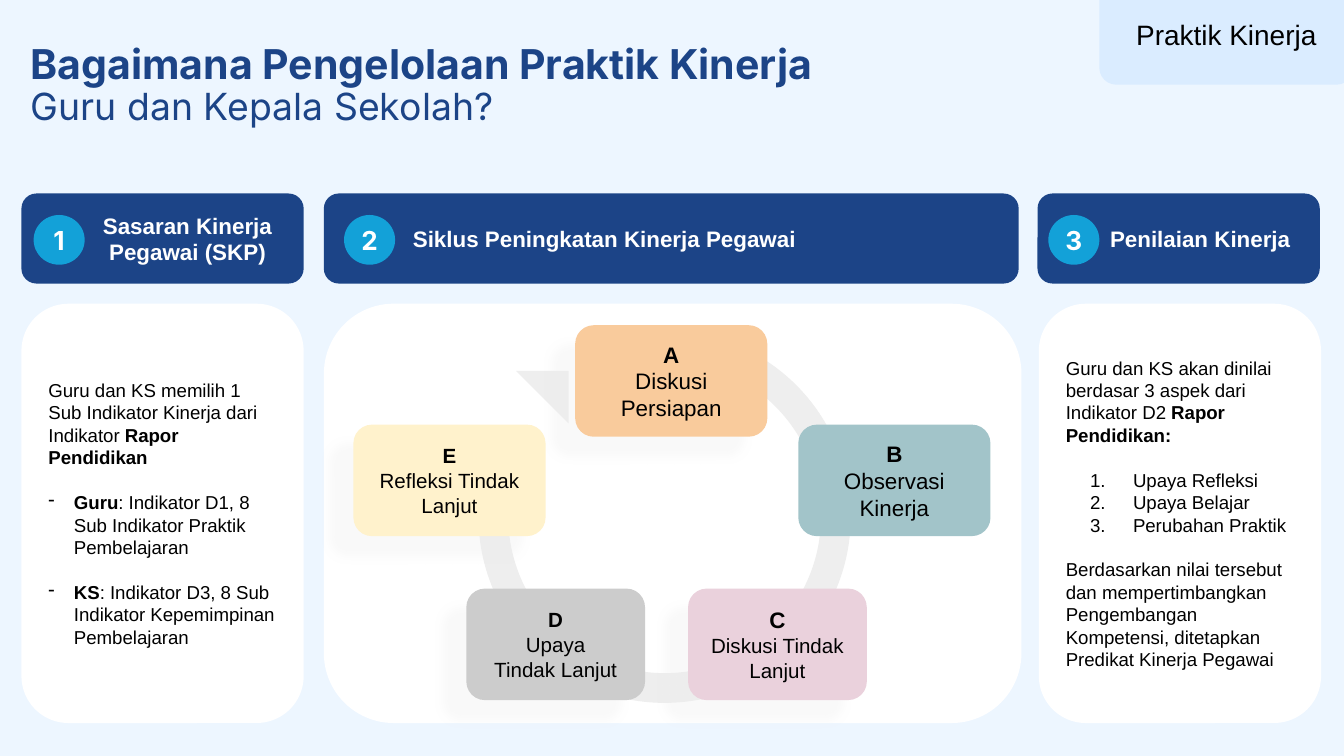
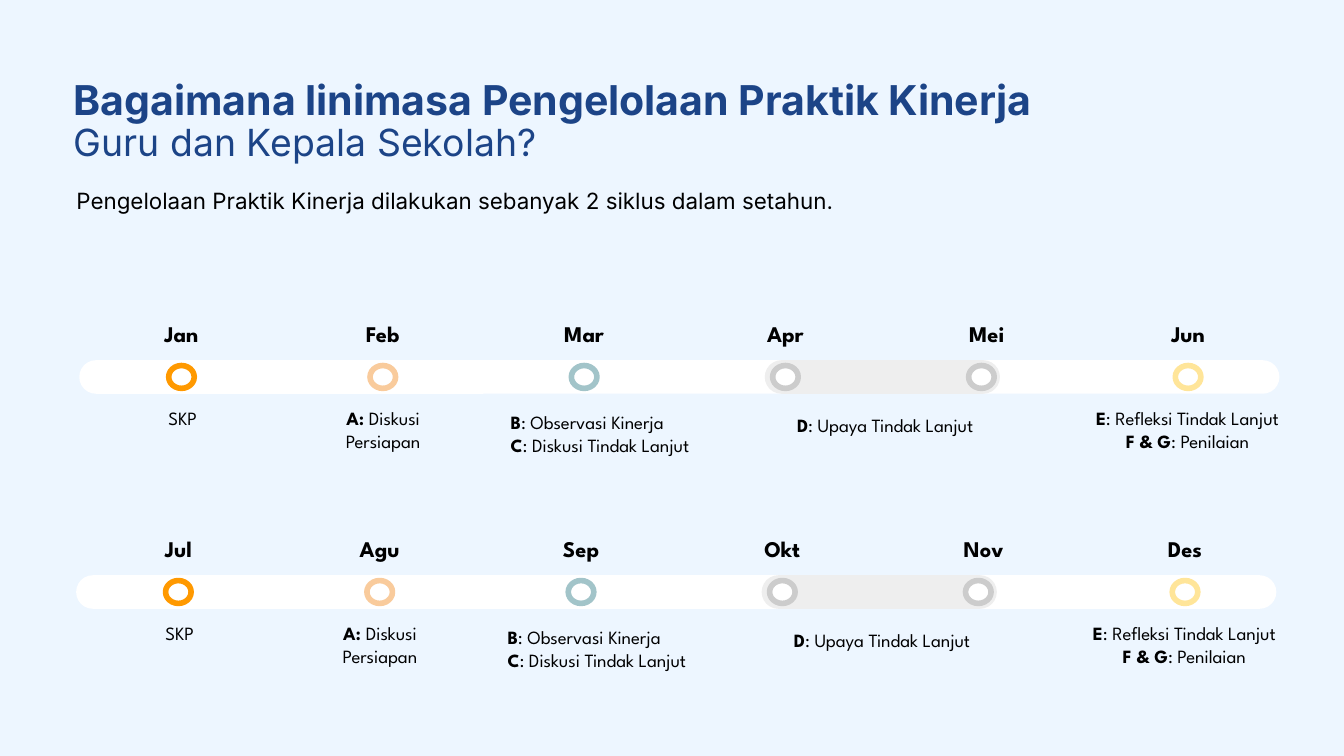
from dataclasses import dataclass

from lxml import etree
from pptx import Presentation
from pptx import util as u
from pptx.dml.color import RGBColor
from pptx.enum import shapes, text
from pptx.oxml.ns import qn


@dataclass(frozen=True)
class Theme:
    background: str = "EDF6FF"
    navy: str = "1C4487"
    tab: str = "DAECFF"
    badge: str = "13A1D8"
    white: str = "FFFFFF"
    black: str = "000000"
    pale: str = "EEEEEE"
    orange: str = "FF9900"
    peach: str = "F9CB9C"
    teal: str = "A2C4C9"
    pink: str = "EAD1DC"
    cream: str = "FFF2CC"
    yellow: str = "FFE599"
    grey: str = "CCCCCC"
    title: int = 22
    subtitle: int = 20
    tab_size: int = 15
    badge_size: int = 14
    heading: int = 12
    label: int = 11
    body: int = 10
    sans: str = "Arial"
    display: str = "Inter"
    timeline: str = "League Spartan"


@dataclass
class Line:
    text: str
    size: int = 0
    bullet: str = ""
    before: int = 0
    spacing: float = 0


THEME = Theme()
COLUMNS, ROWS = 100, 56.25
SLIDE_WIDTH, SLIDE_HEIGHT = u.Inches(10), u.Inches(5.625)
SHAPE = shapes.MSO_SHAPE
LEFT, CENTER = text.PP_ALIGN.LEFT, text.PP_ALIGN.CENTER
TOP, MIDDLE = text.MSO_ANCHOR.TOP, text.MSO_ANCHOR.MIDDLE


def across(columns):
    return int(SLIDE_WIDTH * columns / COLUMNS)


def down(rows):
    return int(SLIDE_HEIGHT * rows / ROWS)


def place(left, top, width, height):
    return across(left), down(top), across(width), down(height)


def color(value):
    return RGBColor.from_string(value)


def add_bullet(paragraph, bullet):
    numbered = bullet == "1."
    margin, hang = (5, 3.2) if numbered else (1.9, 1.9)
    properties = paragraph._p.get_or_add_pPr()
    properties.set("marL", str(across(margin)))
    properties.set("indent", str(-across(hang)))
    if numbered:
        etree.SubElement(properties, qn("a:buAutoNum"), type="arabicPeriod")
    else:
        etree.SubElement(properties, qn("a:buChar"), char=bullet)


def write(shape, lines, size, font=THEME.sans, ink=THEME.black, align=LEFT,
          anchor=MIDDLE, insets=(1, 1, 1, 1), wrap=True):
    frame = shape.text_frame
    frame.word_wrap = wrap
    frame.vertical_anchor = anchor
    frame.margin_left, frame.margin_right = across(insets[0]), across(insets[2])
    frame.margin_top, frame.margin_bottom = down(insets[1]), down(insets[3])
    for index, line in enumerate(lines):
        line = line if isinstance(line, Line) else Line(line)
        paragraph = frame.paragraphs[0] if index == 0 else frame.add_paragraph()
        paragraph.alignment = align
        if line.bullet:
            add_bullet(paragraph, line.bullet)
        if line.before:
            paragraph.space_before = u.Pt(line.before)
        if line.spacing:
            paragraph.line_spacing = line.spacing
        paragraph.font.name = font
        paragraph.font.size = u.Pt(line.size or size)
        paragraph.font.color.rgb = color(ink)
        parts = [(part, number % 2 == 1)
                 for number, part in enumerate(line.text.split("**")) if part]
        for part, bold in parts:
            run = paragraph.add_run()
            run.text = part
            if len(parts) > 1:
                run.font.bold = bold
            else:
                paragraph.font.bold = bold


def add_block(container, kind, box, fill, outline=None):
    shape = container.add_shape(kind, *place(*box))
    shape.shadow.inherit = False
    shape.fill.solid()
    shape.fill.fore_color.rgb = color(fill)
    if outline:
        shape.line.color.rgb = color(outline)
        shape.line.width = u.Pt(3)
    else:
        shape.line.fill.background()
    return shape


def add_label(container, box, lines, size, **style):
    write(container.add_textbox(*place(*box)), lines, size, **style)


def add_shadow(shape):
    effects = shape._element.spPr.find(qn("a:effectLst"))
    shadow = etree.SubElement(effects, qn("a:outerShdw"), blurRad=str(u.Pt(4.5)),
                              dist=str(u.Pt(16.5)), dir=str(140 * 60000),
                              algn="bl", rotWithShape="0")
    tint = etree.SubElement(shadow, qn("a:srgbClr"), val=THEME.pale)
    etree.SubElement(tint, qn("a:alpha"), val="30000")


def add_slide(presentation):
    slide = presentation.slides.add_slide(presentation.slide_layouts[6])
    slide.background.fill.solid()
    slide.background.fill.fore_color.rgb = color(THEME.background)
    return slide


def add_title(slide, box, title):
    lines = [Line(f"**{title}**", spacing=0.9),
             Line("Guru dan Kepala Sekolah?", THEME.subtitle, spacing=0.9)]
    add_label(slide.shapes, box, lines, THEME.title, font=THEME.display,
              ink=THEME.navy, insets=(0.7, 0.4, 0.7, 0.4))


def add_heading(slide, number, left, width, badge_left, inset, align, lines):
    band = add_block(slide.shapes, SHAPE.ROUNDED_RECTANGLE,
                     (left, 14.4, width, 6.7), THEME.navy)
    write(band, [f"**{line}**" for line in lines], THEME.heading,
          ink=THEME.white, align=align, insets=(inset, 1, 1, 1))
    badge = add_block(slide.shapes, SHAPE.OVAL, (badge_left, 16, 3.8, 3.7), THEME.badge)
    write(badge, [f"**{number}**"], THEME.badge_size, font=THEME.display,
          ink=THEME.white, align=CENTER, wrap=False)


def add_card(slide, left, width, lines=()):
    card = add_block(slide.shapes, SHAPE.ROUNDED_RECTANGLE,
                     (left, 22.6, width, 31.2), THEME.white)
    write(card, lines, THEME.body)


def add_cycle_arrow(slide):
    group = slide.shapes.add_group_shape().shapes
    ring = add_block(group, SHAPE.BLOCK_ARC, (35.6, 24.6, 27.7, 27.7), THEME.pale)
    for index, value in enumerate((74.38 * 0.6, 27 * 0.6, 0.08)):
        ring.adjustments[index] = value
    head = add_block(group, SHAPE.RIGHT_TRIANGLE, (38.4, 27.6, 3.9, 3.9), THEME.pale)
    for shape in (ring, head):
        shape.rotation = 180


def add_step(slide, left, top, width, fill, shadowed, size, lines):
    step = add_block(slide.shapes, SHAPE.ROUNDED_RECTANGLE,
                     (left, top, width, 8.3), fill)
    if shadowed:
        add_shadow(step)
    write(step, lines, size, align=CENTER)


def build_practice(presentation):
    slide = add_slide(presentation)
    headings = [
        (1, 1.6, 21, 2.5, 4.7, CENTER, ["Sasaran Kinerja", "Pegawai (SKP)"]),
        (2, 24.1, 51.7, 25.6, 6.3, LEFT, ["Siklus Peningkatan Kinerja Pegawai"]),
        (3, 77.2, 21, 78, 4.2, CENTER, ["Penilaian Kinerja"]),
    ]
    for heading in headings:
        add_heading(slide, *heading)
    add_card(slide, 1.6, 21, [
        "Guru dan KS memilih 1 Sub Indikator Kinerja dari Indikator **Rapor Pendidikan**",
        Line("**Guru**: Indikator D1, 8 Sub Indikator Praktik Pembelajaran",
             bullet="-", before=12),
        Line("**KS**: Indikator D3, 8 Sub Indikator Kepemimpinan Pembelajaran",
             bullet="-", before=12),
    ])
    add_card(slide, 24.1, 51.9)
    add_card(slide, 77.3, 21, [
        "Guru dan KS akan dinilai berdasar 3 aspek dari Indikator D2 **Rapor Pendidikan:**",
        Line("Upaya Refleksi", bullet="1.", before=12),
        Line("Upaya Belajar", bullet="1."),
        Line("Perubahan Praktik", bullet="1."),
        Line("Berdasarkan nilai tersebut dan mempertimbangkan Pengembangan Kompetensi, "
             "ditetapkan Predikat Kinerja Pegawai", before=12),
    ])
    add_title(slide, (1.6, 1.2, 77, 10.4), "Bagaimana Pengelolaan Praktik Kinerja")
    tab = add_block(slide.shapes, SHAPE.ROUNDED_RECTANGLE,
                    (81.8, -1.2, 18.9, 7.5), THEME.tab)
    write(tab, ["Praktik Kinerja"], THEME.tab_size, align=CENTER)
    add_cycle_arrow(slide)
    steps = [
        (42.8, 24.2, 14.3, THEME.peach, True, THEME.heading,
         ["**A**", "Diskusi Persiapan"]),
        (59.4, 31.6, 14.3, THEME.teal, False, THEME.heading,
         ["**B**", "Observasi Kinerja"]),
        (51.2, 43.8, 13.3, THEME.pink, True, THEME.heading,
         ["**C**", Line("Diskusi Tindak Lanjut", THEME.label)]),
        (26.3, 31.6, 14.3, THEME.cream, True, THEME.label,
         ["**E**", "Refleksi Tindak Lanjut"]),
        (34.7, 43.8, 13.3, THEME.grey, True, THEME.label,
         ["**D**", "Upaya", "Tindak Lanjut"]),
    ]
    for step in steps:
        add_step(slide, *step)


def add_timeline(slide, left, top, months):
    group = slide.shapes.add_group_shape().shapes
    bars = [(0, 89.3, THEME.white), (51, 17.5, THEME.pale)]
    for offset, width, fill in bars:
        bar = add_block(group, SHAPE.ROUNDED_RECTANGLE,
                        (left + offset, top, width, 2.5), fill)
        bar.adjustments[0] = 0.5
    rings = [(THEME.orange, 0), (THEME.peach, 0), (THEME.teal, 0),
             (THEME.grey, 0), (THEME.grey, -0.4), (THEME.yellow, 0)]
    for index, (month, (outline, shift)) in enumerate(zip(months, rings)):
        middle = left + 7.6 + index * 14.98
        add_label(group, (middle - 3.55, top - 3.8, 7.1, 3.7), [f"**{month}**"],
                  THEME.heading, font=THEME.timeline, align=CENTER, insets=(0,) * 4)
        add_block(group, SHAPE.OVAL, (middle - 0.95 + shift, top + 0.4, 1.9, 1.7),
                  THEME.white, outline)
    activities = [
        (3.2, 3.5, 9, 3.7, CENTER, TOP, ["SKP"]),
        (17, 3.5, 11.2, 3.7, CENTER, TOP, ["**A: **Diskusi Persiapan"]),
        (32.1, 3.8, 15.6, 3.7, LEFT, TOP,
         ["**B**: Observasi Kinerja", "**C**: Diskusi Tindak Lanjut"]),
        (49, 3, 21.9, 3.7, CENTER, MIDDLE, ["**D**: Upaya Tindak Lanjut"]),
        (75.6, 3.5, 13.7, 6.5, CENTER, TOP,
         ["**E**: Refleksi Tindak Lanjut", "**F & G**: Penilaian"]),
    ]
    for offset, drop, width, height, align, anchor, lines in activities:
        add_label(group, (left + offset, top + drop, width, height), lines, THEME.body,
                  font=THEME.timeline, align=align, anchor=anchor, insets=(0,) * 4)


def build_calendar(presentation):
    slide = add_slide(presentation)
    add_title(slide, (4.8, 3.9, 91, 10.4), "Bagaimana linimasa Pengelolaan Praktik Kinerja")
    add_label(slide.shapes, (4.7, 12.9, 82.3, 7.7),
              ["Pengelolaan Praktik Kinerja dilakukan sebanyak 2 siklus dalam setahun."],
              THEME.heading, font=THEME.display, anchor=TOP)
    add_timeline(slide, 5.9, 26.8, ["Jan", "Feb", "Mar", "Apr", "Mei", "Jun"])
    add_timeline(slide, 5.67, 42.8, ["Jul", "Agu", "Sep", "Okt", "Nov", "Des"])


def main():
    presentation = Presentation()
    presentation.slide_width, presentation.slide_height = SLIDE_WIDTH, SLIDE_HEIGHT
    build_practice(presentation)
    build_calendar(presentation)
    presentation.save("out.pptx")


if __name__ == "__main__":
    main()
